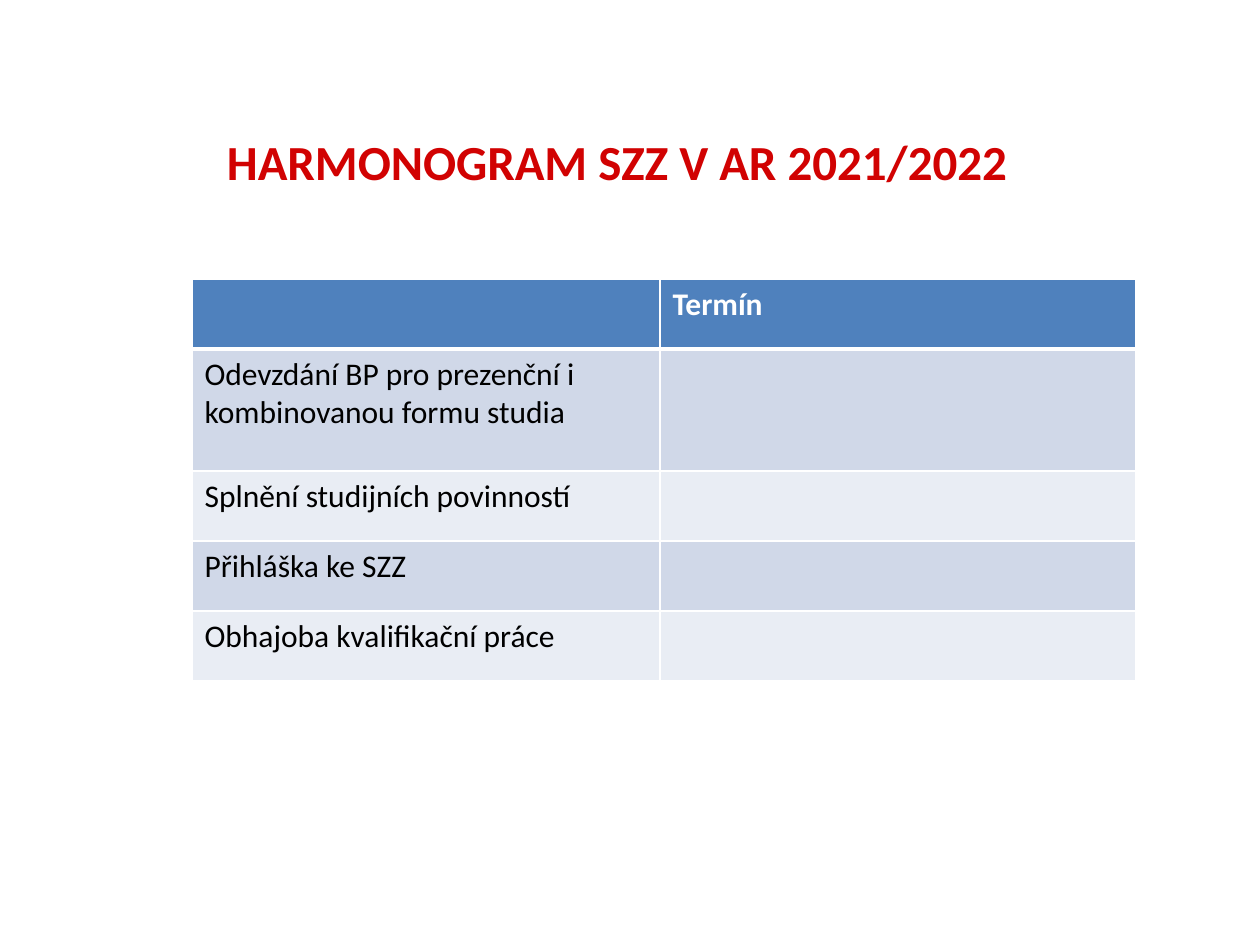
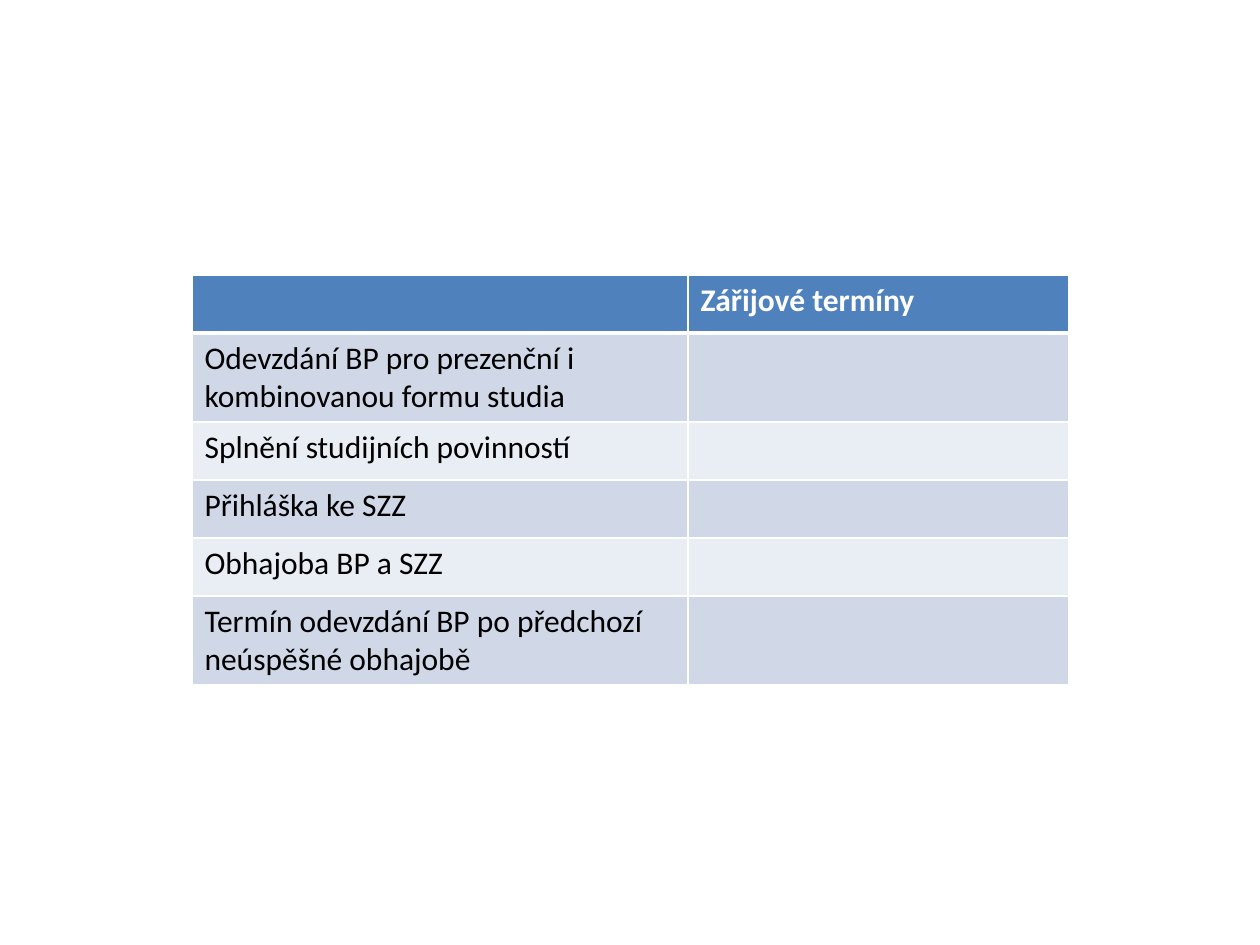
from lxml import etree
from pptx import Presentation
from pptx import util as u
from pptx.dml.color import RGBColor
from pptx.enum import text
from pptx.oxml import ns

RED = RGBColor(0xD1, 0x02, 0x02)
BLUE = RGBColor(0x4F, 0x81, 0xBD)
DARK = RGBColor(0xD0, 0xD8, 0xE8)
LIGHT = RGBColor(0xE9, 0xED, 0xF4)
WHITE = RGBColor(0xFF, 0xFF, 0xFF)
BLACK = RGBColor(0, 0, 0)
FONT = "Calibri"
SCALE = 914400 / 126


def px(size):
    return u.Emu(round(size * SCALE))


class Deck:
    def __init__(self):
        self.prs = Presentation()
        self.prs.slide_width = px(1260)
        self.prs.slide_height = px(945)
        self.slide = None

    def page(self):
        self.slide = self.prs.slides.add_slide(self.prs.slide_layouts[6])

    def style(self, para, size, color, bold=False):
        font = para.font
        font.name = FONT
        font.size = u.Pt(size)
        font.bold = bold
        font.color.rgb = color

    def title(self, words, left, top, width, height):
        box = self.slide.shapes.add_textbox(px(left), px(top), px(width), px(height))
        frame = box.text_frame
        frame.word_wrap = True
        frame.margin_left = frame.margin_right = 0
        frame.margin_top = frame.margin_bottom = 0
        para = frame.paragraphs[0]
        para.text = words
        para.alignment = text.PP_ALIGN.CENTER
        self.style(para, 28, RED, True)

    def edge(self, cell, side, width):
        props = cell._tc.get_or_add_tcPr()
        line = etree.SubElement(props, ns.qn(f"a:ln{side}"), w=str(u.Pt(width)))
        fill = etree.SubElement(line, ns.qn("a:solidFill"))
        etree.SubElement(fill, ns.qn("a:srgbClr"), val=str(WHITE))

    def cell(self, cell, words, row):
        head = row == 0
        for side in "LRTB":
            thick = (row, side) in ((0, "B"), (1, "T"))
            self.edge(cell, side, 3 if thick else 1)
        cell.fill.solid()
        cell.fill.fore_color.rgb = BLUE if head else DARK if row % 2 else LIGHT
        para = cell.text_frame.paragraphs[0]
        para.text = words
        self.style(para, 18, WHITE if head else BLACK, head)

    def table(self, left, top, widths, heights, head, labels):
        frame = self.slide.shapes.add_table(
            len(heights), len(widths), px(left), px(top),
            px(sum(widths)), px(sum(heights)))
        grid = frame.table
        for col, width in zip(grid.columns, widths):
            col.width = px(width)
        rows = [("", head)] + [(label, "") for label in labels]
        for i, (height, row) in enumerate(zip(heights, rows)):
            grid.rows[i].height = px(height)
            for j, words in enumerate(row):
                self.cell(grid.cell(i, j), words, i)

    def save(self):
        self.prs.save("out.pptx")


def main():
    shared = [
        "Odevzdání BP pro prezenční i kombinovanou formu studia",
        "Splnění studijních povinností",
        "Přihláška ke SZZ",
    ]
    deck = Deck()

    deck.page()
    deck.title("HARMONOGRAM SZZ V AR 2021/2022", 97, 131, 1040, 147)
    deck.table(192, 279, (468, 476), [70, 122] + [70] * 3, "Termín",
               shared + ["Obhajoba kvalifikační práce"])

    deck.page()
    deck.table(192, 275, (496, 381), [58, 89] + [58] * 3 + [89],
               "Zářijové termíny",
               shared + ["Obhajoba BP a SZZ",
                         "Termín odevzdání BP po předchozí neúspěšné obhajobě"])

    deck.save()


if __name__ == "__main__":
    main()
